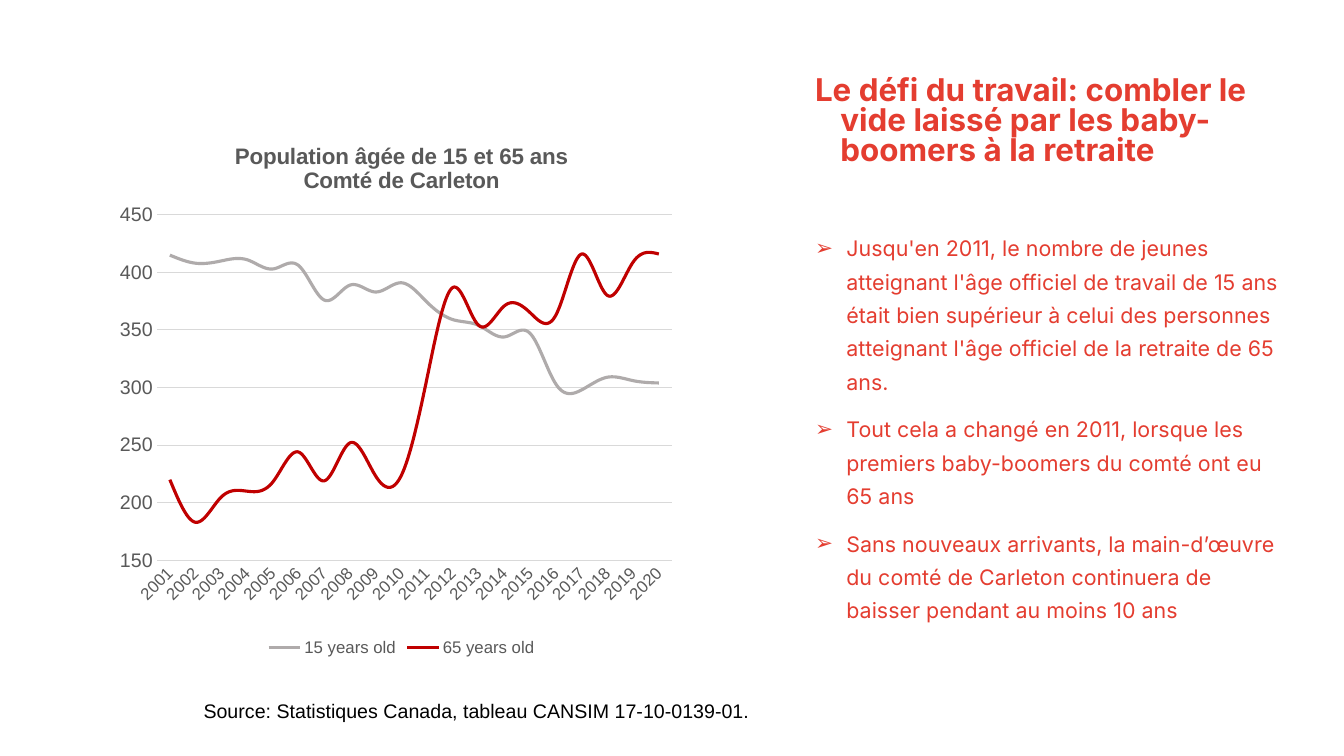
from lxml import etree
from pptx import Presentation
from pptx.chart.data import CategoryChartData
from pptx.dml.color import RGBColor
from pptx.enum.chart import XL_CHART_TYPE as ChartType
from pptx.enum.chart import XL_LEGEND_POSITION as LegendPosition
from pptx.enum.chart import XL_TICK_MARK as TickMark
from pptx.oxml import parse_xml
from pptx.oxml.ns import nsdecls, qn
from pptx.util import Cm, Pt

RED = RGBColor(0xE4, 0x3D, 0x30)
BLACK = RGBColor(0, 0, 0)
GREY_TEXT = RGBColor(0x59, 0x59, 0x59)
GRID_GREY = RGBColor(0xD9, 0xD9, 0xD9)
YOUTH_GREY = RGBColor(0xAF, 0xAB, 0xAB)
SENIOR_RED = RGBColor(0xC0, 0, 0)

HEADING = "Le défi du travail: combler le vide laissé par les baby-boomers à la retraite"
POINTS = [
    "Jusqu'en 2011, le nombre de jeunes atteignant l'âge officiel de travail de 15 ans "
    "était bien supérieur à celui des personnes atteignant l'âge officiel de la retraite de 65 ans.",
    "Tout cela a changé en 2011, lorsque les premiers baby-boomers du comté ont eu 65 ans",
    "Sans nouveaux arrivants, la main-d’œuvre du comté de Carleton continuera de baisser "
    "pendant au moins 10 ans",
]
SOURCE = "Source: Statistiques Canada, tableau CANSIM 17-10-0139-01."
CHART_TITLE = "Population âgée de 15 et 65 ans\nComté de Carleton"
YEARS = [str(year) for year in range(2001, 2021)]
AGE_GROUPS = [
    ("15 years old", YOUTH_GREY, [415, 408, 410, 411, 403, 406, 376, 389, 383, 391,
                                  374, 359, 354, 344, 347, 303, 298, 309, 306, 304]),
    ("65 years old", SENIOR_RED, [220, 183, 205, 210, 218, 244, 219, 252, 223, 224,
                                  309, 387, 354, 371, 365, 363, 416, 380, 409, 416]),
]
PLOT_LAYOUT = {"x": 0.072, "y": 0.171, "w": 0.901, "h": 0.643}


def style_font(font, name, size, color, bold=False):
    """Set the typeface, size, colour and weight of a font."""
    font.name, font.size, font.bold = name, Pt(size), bold
    font.color.rgb = color


def add_text(slide, box, lines):
    """Add a wrapping text box with one paragraph per line and return its paragraphs."""
    frame = slide.shapes.add_textbox(*box).text_frame
    frame.word_wrap = True
    frame.text = "\n".join(lines)
    return frame.paragraphs


def hang(paragraph, margin, indent, bullet=None):
    """Give a paragraph a hanging indent and, if asked, a red bullet."""
    properties = paragraph._p.get_or_add_pPr()
    properties.set("marL", str(margin))
    properties.set("indent", str(-indent))
    if bullet:
        color = etree.SubElement(properties, qn("a:buClr"))
        etree.SubElement(color, qn("a:srgbClr"), val=str(RED))
        etree.SubElement(properties, qn("a:buFont"), typeface="Arial")
        etree.SubElement(properties, qn("a:buChar"), char=bullet)


def add_message(slide, left, top, width):
    """Place the heading and its bulleted points in the column."""
    heading, = add_text(slide, (left, top, width, Cm(3.3)), [HEADING])
    hang(heading, Cm(1.27), Cm(0.64))
    heading.line_spacing = 0.8
    style_font(heading.font, "Inter", 22.4, RED, bold=True)

    points = add_text(slide, (left, top + Cm(3.78), width, Cm(11)), POINTS)
    for number, point in enumerate(points):
        hang(point, Cm(1.42), Cm(0.79), "➢")
        point.line_spacing = 1.3
        point.space_before = Pt(10 if number else 0)
        style_font(point.font, "Inter", 15.3, RED)


def style_axes(chart):
    """Format the year axis, the population axis and the gridlines."""
    years, population = chart.category_axis, chart.value_axis
    for axis, size in ((years, 12), (population, 14)):
        axis.major_tick_mark = axis.minor_tick_mark = TickMark.NONE
        style_font(axis.tick_labels.font, "Arial", size, GREY_TEXT)
    population.minimum_scale, population.maximum_scale = 150, 450
    population.major_unit = 50
    population.has_major_gridlines = True
    population.format.line.fill.background()
    for line in (years.format.line, population.major_gridlines.format.line):
        line.color.rgb, line.width = GRID_GREY, Pt(0.75)
    years._element.find(qn("c:txPr")).find(qn("a:bodyPr")).set("rot", "-2700000")


def fix_plot_area(chart):
    """Set the inner plot area as fractions of the chart."""
    plot_area = chart._chartSpace.chart.plotArea
    for layout in plot_area.findall(qn("c:layout")):
        plot_area.remove(layout)
    sizes = "".join(f'<c:{key} val="{share}"/>' for key, share in PLOT_LAYOUT.items())
    plot_area.insert(0, parse_xml(
        f'<c:layout {nsdecls("c")}><c:manualLayout><c:layoutTarget val="inner"/>'
        f'<c:xMode val="edge"/><c:yMode val="edge"/>{sizes}</c:manualLayout></c:layout>'))


def add_population_chart(slide, left, top, width, height):
    """Place the line chart of the two age groups in the box."""
    figures = CategoryChartData()
    figures.categories = YEARS
    for name, _, counts in AGE_GROUPS:
        figures.add_series(name, counts)
    chart = slide.shapes.add_chart(
        ChartType.LINE, left, top, width, height, figures).chart
    style_font(chart.font, "Arial", 10, BLACK)

    chart.has_title = True
    title = chart.chart_title
    title.include_in_layout = False
    title.text_frame.text = CHART_TITLE
    for paragraph in title.text_frame.paragraphs:
        style_font(paragraph.font, "Arial", 16, GREY_TEXT, bold=True)

    chart.has_legend = True
    chart.legend.position = LegendPosition.BOTTOM
    chart.legend.include_in_layout = False
    style_font(chart.legend.font, "Arial", 12, GREY_TEXT)

    chart.plots[0].vary_by_categories = False
    for series, (_, color, _) in zip(chart.plots[0].series, AGE_GROUPS):
        series.smooth = True
        series.format.line.color.rgb = color
        series.format.line.width = Pt(2.25)
    style_axes(chart)
    fix_plot_area(chart)


def add_source(slide, left, top, width, height):
    """Place the source line in the box."""
    source, = add_text(slide, (left, top, width, height), [SOURCE])
    style_font(source.font, "Arial", 14, BLACK)


def main():
    """Build the slide and save it."""
    deck = Presentation()
    deck.slide_width, deck.slide_height = Cm(33.87), Cm(19.05)
    slide = deck.slides.add_slide(deck.slide_layouts[6])
    add_message(slide, Cm(19.66), Cm(1.83), Cm(12.93))
    add_population_chart(slide, Cm(2.92), Cm(3.1), Cm(14.4), Cm(13.54))
    add_source(slide, Cm(4.88), Cm(17.48), Cm(23.77), Cm(0.86))
    deck.save("out.pptx")


if __name__ == "__main__":
    main()
